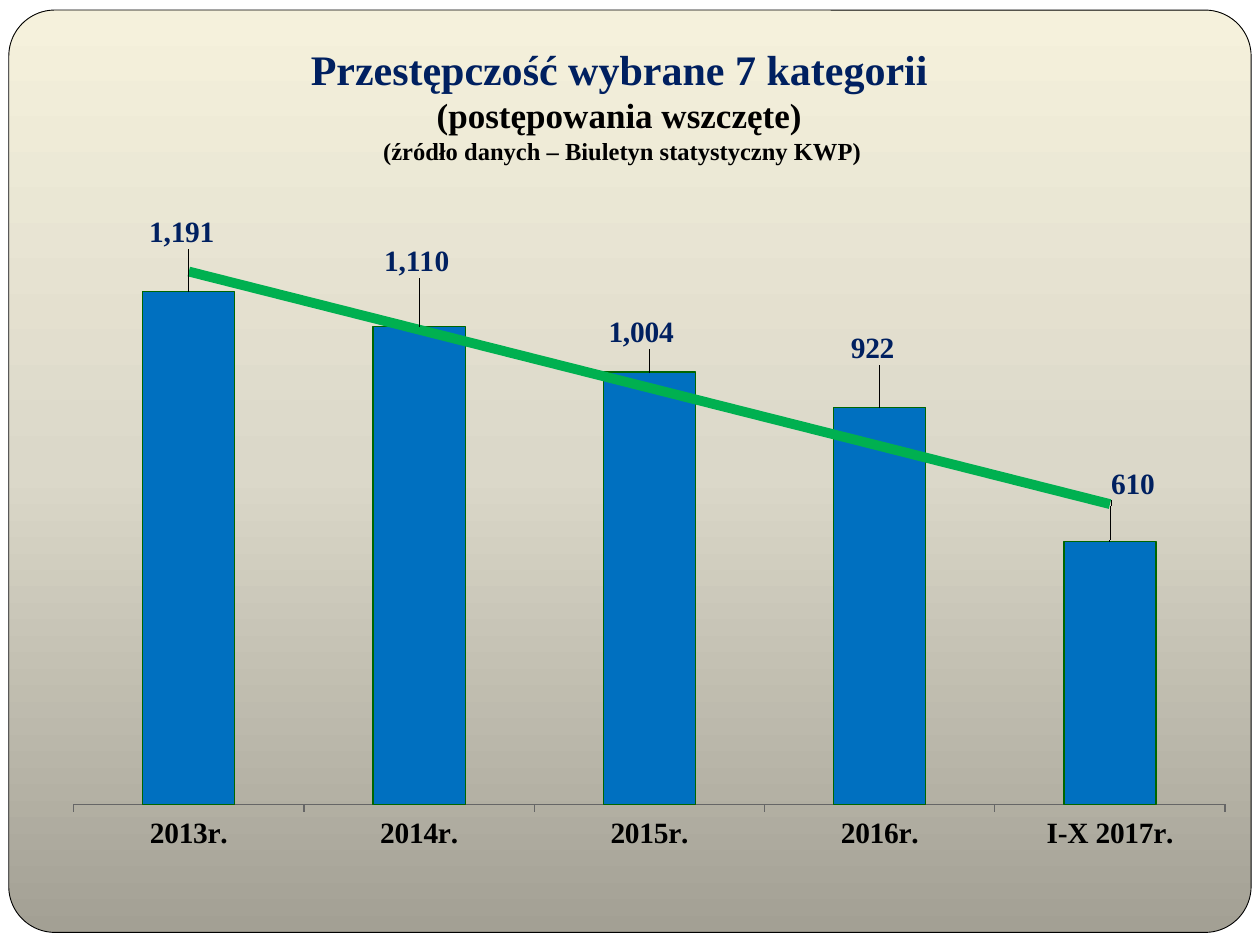
from copy import deepcopy

from pptx import Presentation
from pptx import util as u
from pptx.chart import data
from pptx.dml import color
from pptx.enum import chart as ch, shapes, text
from pptx.oxml import ns, parse_xml

FONT = "Times New Roman"
NAVY = "002060"
BLACK = "000000"
PANEL_STOPS = [(0, "A3A094"), (0.5, "DBD8C9"), (1, "F5F1DC")]
HEADING = [
    ("Przestępczość wybrane 7 kategorii", 24, NAVY),
    ("(postępowania wszczęte)", 20, BLACK),
    (" (źródło danych – Biuletyn statystyczny KWP)", 14, BLACK),
]
CASES = {"2013r.": 1191, "2014r.": 1110, "2015r.": 1004, "2016r.": 922, "I-X 2017r.": 610}
LABEL_SHIFTS = [(-0.006, -0.052), (-0.002, -0.06), (-0.007, -0.025), (-0.006, -0.052), (0.019, -0.05)]


def rgb(value):
    """Return a colour from a hex string."""
    return color.RGBColor.from_string(value)


def set_all(target, values):
    """Set every attribute in a dict of format values."""
    for name, value in values.items():
        setattr(target, name, value)


def style_font(font, size, hex_color):
    """Apply the bold serif style used on the slide."""
    set_all(font, {"name": FONT, "size": u.Pt(size), "bold": True})
    font.color.rgb = rgb(hex_color)


def style_line(line, hex_color, width):
    """Give a line its colour and width in points."""
    line.color.rgb = rgb(hex_color)
    line.width = u.Pt(width)


def chart_xml(tag, body):
    """Build a chart element around the given markup."""
    return parse_xml(f"<c:{tag} {ns.nsdecls('c', 'a')}>{body}</c:{tag}>")


def manual_layout(**parts):
    """Build a manual layout from named values."""
    body = "".join(f'<c:{name} val="{value}"/>' for name, value in parts.items())
    return chart_xml("layout", f"<c:manualLayout>{body}</c:manualLayout>")


def add_panel(slide):
    """Draw the rounded gradient panel behind everything else."""
    panel = slide.shapes.add_shape(
        shapes.MSO_SHAPE.ROUNDED_RECTANGLE,
        u.Inches(0.07), u.Inches(0.08), u.Inches(9.86), u.Inches(7.32))
    panel.adjustments[0] = 0.05
    panel.shadow.inherit = False
    style_line(panel.line, BLACK, 0.5)
    panel.fill.gradient()
    panel.fill.gradient_angle = 90
    first = panel.fill.gradient_stops[0]
    stop_list = panel.element.xpath(".//a:gsLst")[0]
    stop_list.insert(1, deepcopy(stop_list[0]))
    for stop, (position, hex_color) in zip(panel.fill.gradient_stops, PANEL_STOPS):
        stop.position = position
        stop.color.rgb = rgb(hex_color)
    slide.shapes.element.insert(2, panel.element)


def fill_title(title):
    """Place the title and write its three lines."""
    set_all(title, {"left": u.Inches(1), "top": u.Inches(0.16),
                    "width": u.Inches(7.83), "height": u.Inches(1.25)})
    frame = title.text_frame
    set_all(frame, {"word_wrap": True, "auto_size": text.MSO_AUTO_SIZE.NONE,
                    "vertical_anchor": text.MSO_ANCHOR.BOTTOM,
                    "margin_bottom": u.Inches(0.1)})
    heading = frame.paragraphs[0]
    heading.alignment = text.PP_ALIGN.CENTER
    for index, (words, size, hex_color) in enumerate(HEADING):
        if index:
            heading.add_line_break()
        run = heading.add_run()
        run.text = words
        style_font(run.font, size, hex_color)


def place_labels(series):
    """Label each column and shift the label to its place."""
    for index, (x, y) in enumerate(LABEL_SHIFTS):
        label = series.points[index].data_label
        style_font(label.font, 16.8, NAVY)
        label.position = ch.XL_LABEL_POSITION.OUTSIDE_END
    for label, (x, y) in zip(series.data_labels._element.xpath("c:dLbl"), LABEL_SHIFTS):
        label.insert(1, manual_layout(x=x, y=y))


def add_trend(chart, hex_color, width):
    """Add a linear trend line to the only series."""
    trend = chart_xml("trendline", (
        f'<c:spPr><a:ln w="{u.Pt(width)}"><a:solidFill><a:srgbClr val="{hex_color}"/>'
        '</a:solidFill></a:ln></c:spPr><c:trendlineType val="linear"/>'
        '<c:dispRSqr val="0"/><c:dispEq val="0"/>'))
    chart.element.xpath(".//c:ser/c:cat")[0].addprevious(trend)


def add_cases_chart(slide):
    """Add the column chart of opened cases."""
    cases = data.CategoryChartData(number_format="#,##0")
    cases.categories = list(CASES)
    cases.add_series("Series 1", list(CASES.values()))
    chart = slide.shapes.add_chart(
        ch.XL_CHART_TYPE.COLUMN_CLUSTERED, u.Inches(0.25), u.Inches(1.44),
        u.Inches(9.56), u.Inches(5.71), cases).chart
    set_all(chart, {"has_legend": False, "has_title": False})
    style_font(chart.font, 16.8, BLACK)
    set_all(chart.value_axis, {"visible": False, "has_major_gridlines": False,
                               "minimum_scale": 0, "maximum_scale": 1400})
    years = chart.category_axis
    years.major_tick_mark = ch.XL_TICK_MARK.OUTSIDE
    style_font(years.tick_labels.font, 16.8, BLACK)
    style_line(years.format.line, "666666", 0.75)
    set_all(chart.plots[0], {"gap_width": 150, "vary_by_categories": False})
    series = chart.plots[0].series[0]
    series.format.fill.solid()
    series.format.fill.fore_color.rgb = rgb("0070C0")
    style_line(series.format.line, "006600", 0.75)
    place_labels(series)
    add_trend(chart, "00B050", 5.6)
    plot_area = chart.element.xpath(".//c:plotArea")[0]
    for layout in plot_area.xpath("c:layout"):
        plot_area.remove(layout)
    plot_area.insert(0, manual_layout(
        layoutTarget="inner", xMode="edge", yMode="edge", x=0.035, y=0.028, w=0.956, h=0.838))


def main():
    """Build and save the slide."""
    deck = Presentation()
    set_all(deck, {"slide_width": u.Inches(10), "slide_height": u.Inches(7.5)})
    slide = deck.slides.add_slide(deck.slide_layouts[5])
    add_panel(slide)
    fill_title(slide.shapes.title)
    add_cases_chart(slide)
    deck.save("out.pptx")


if __name__ == "__main__":
    main()
